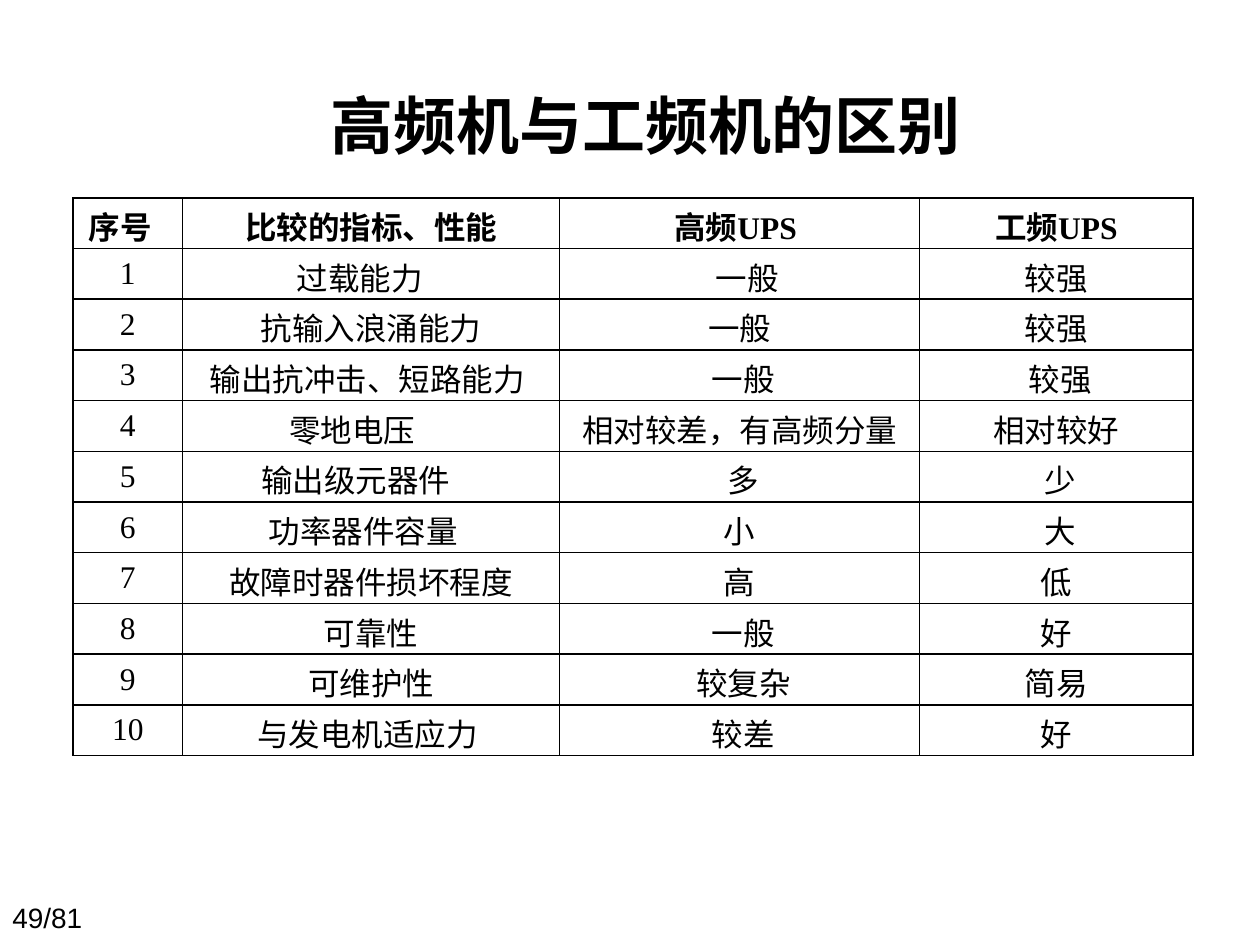
from dataclasses import dataclass

from pptx import Presentation
from pptx.dml.color import RGBColor
from pptx.enum import text
from pptx.oxml import parse_xml
from pptx.oxml.ns import nsdecls
from pptx.util import Inches, Pt

BLACK = RGBColor(0x00, 0x00, 0x00)
SANS, SERIF, CJK = "Arial", "Times New Roman", "Noto Sans CJK SC"
COLUMNS = (0.87, 2.99, 2.86, 2.17)
TABLE_HEIGHT = 4.43
SPACE = 0.06  # width of one space at the table's text size


@dataclass(frozen=True)
class Entry:
    text: str
    shift: int = 0  # spaces to the right (+) or left (-) of the centre


HEADER = (Entry("序号", -2), Entry("比较的指标、性能"),
          Entry("高频UPS", -1), Entry("工频UPS"))
ROWS = (
    (Entry("过载能力", -3), Entry("一般", 2), Entry("较强")),
    (Entry("抗输入浪涌能力"), Entry("一般"), Entry("较强")),
    (Entry("输出抗冲击、短路能力", -1), Entry("一般", 1), Entry("较强", 1)),
    (Entry("零地电压", -5), Entry("相对较差，有高频分量"), Entry("相对较好")),
    (Entry("输出级元器件", -4), Entry("多", 1), Entry("少", 1)),
    (Entry("功率器件容量", -2), Entry("小"), Entry("大", 1)),
    (Entry("故障时器件损坏程度"), Entry("高"), Entry("低")),
    (Entry("可靠性"), Entry("一般", 1), Entry("好")),
    (Entry("可维护性"), Entry("较复杂", 1), Entry("简易")),
    (Entry("与发电机适应力", -1), Entry("较差", 1), Entry("好")),
)


def write(p, words: str, font: str, size: float, bold: bool = False) -> None:
    r = p.add_run()
    r.text = words
    p.font.name, p.font.size, p.font.bold = font, Pt(size), bold
    p.font.color.rgb = BLACK
    # Run-level East Asian face for the Chinese characters
    r.font.name, r.font.size, r.font.bold = font, Pt(size), bold
    r.font.color.rgb = BLACK
    r.font._element.append(
        parse_xml(f'<a:ea {nsdecls("a")} typeface="{CJK}"/>'))


def add_label(s, box: tuple, words: str, font: str, size: float,
              wrap: bool = True, bold: bool = False):
    tf = s.shapes.add_textbox(*map(Inches, box)).text_frame
    tf.word_wrap = wrap
    write(tf.paragraphs[0], words, font, size, bold)
    return tf


def add_borders(cell) -> None:
    tc_pr = cell._tc.get_or_add_tcPr()
    for place, side in enumerate("LRTB"):
        tc_pr.insert(place, parse_xml(
            f'<a:ln{side} {nsdecls("a")} w="{Pt(1)}"><a:solidFill>'
            f'<a:srgbClr val="{BLACK}"/></a:solidFill></a:ln{side}>'))


def fill_cell(cell, entry: Entry, bold: bool) -> None:
    cell.fill.background()
    add_borders(cell)
    cell.vertical_anchor = text.MSO_ANCHOR.MIDDLE
    cell.margin_left = Inches(0.1 + SPACE * max(entry.shift, 0))
    cell.margin_right = Inches(0.1 + SPACE * max(-entry.shift, 0))
    # Chinese lines are taller than digits, so they get tighter margins
    is_number = entry.text.isdigit()
    cell.margin_top = Inches(0.05 if is_number else 0.04)
    cell.margin_bottom = Inches(0.05 if is_number else 0)
    p = cell.text_frame.paragraphs[0]
    p.alignment = text.PP_ALIGN.CENTER
    write(p, entry.text, SERIF, 18, bold)


def add_comparison(s) -> None:
    numbered = [(Entry(str(n)), *row) for n, row in enumerate(ROWS, 1)]
    grid = [HEADER, *numbered]
    table = s.shapes.add_table(
        len(grid), len(COLUMNS), Inches(0.58), Inches(1.57),
        Inches(sum(COLUMNS)), Inches(TABLE_HEIGHT)).table
    table.first_row = table.horz_banding = False
    for column, width in zip(table.columns, COLUMNS):
        column.width = Inches(width)
    for i, entries in enumerate(grid):
        table.rows[i].height = Inches(TABLE_HEIGHT / len(grid))
        for j, entry in enumerate(entries):
            fill_cell(table.cell(i, j), entry, bold=i == 0)


def main() -> None:
    prs = Presentation()
    prs.slide_width, prs.slide_height = Inches(10), Inches(7.5)
    s = prs.slides.add_slide(prs.slide_layouts[6])

    # Page number
    add_label(s, (0, 7.1, 0.89, 0.37), "49/81", SANS, 16, wrap=False)

    # Comparison table
    add_comparison(s)

    # Title
    tf = add_label(s, (2.17, 0.64, 5.91, 0.7), "高频机与工频机的区别",
                   CJK, 36, bold=True)
    tf.vertical_anchor = text.MSO_ANCHOR.MIDDLE
    tf.paragraphs[0].alignment = text.PP_ALIGN.CENTER

    prs.save("out.pptx")


if __name__ == "__main__":
    main()
